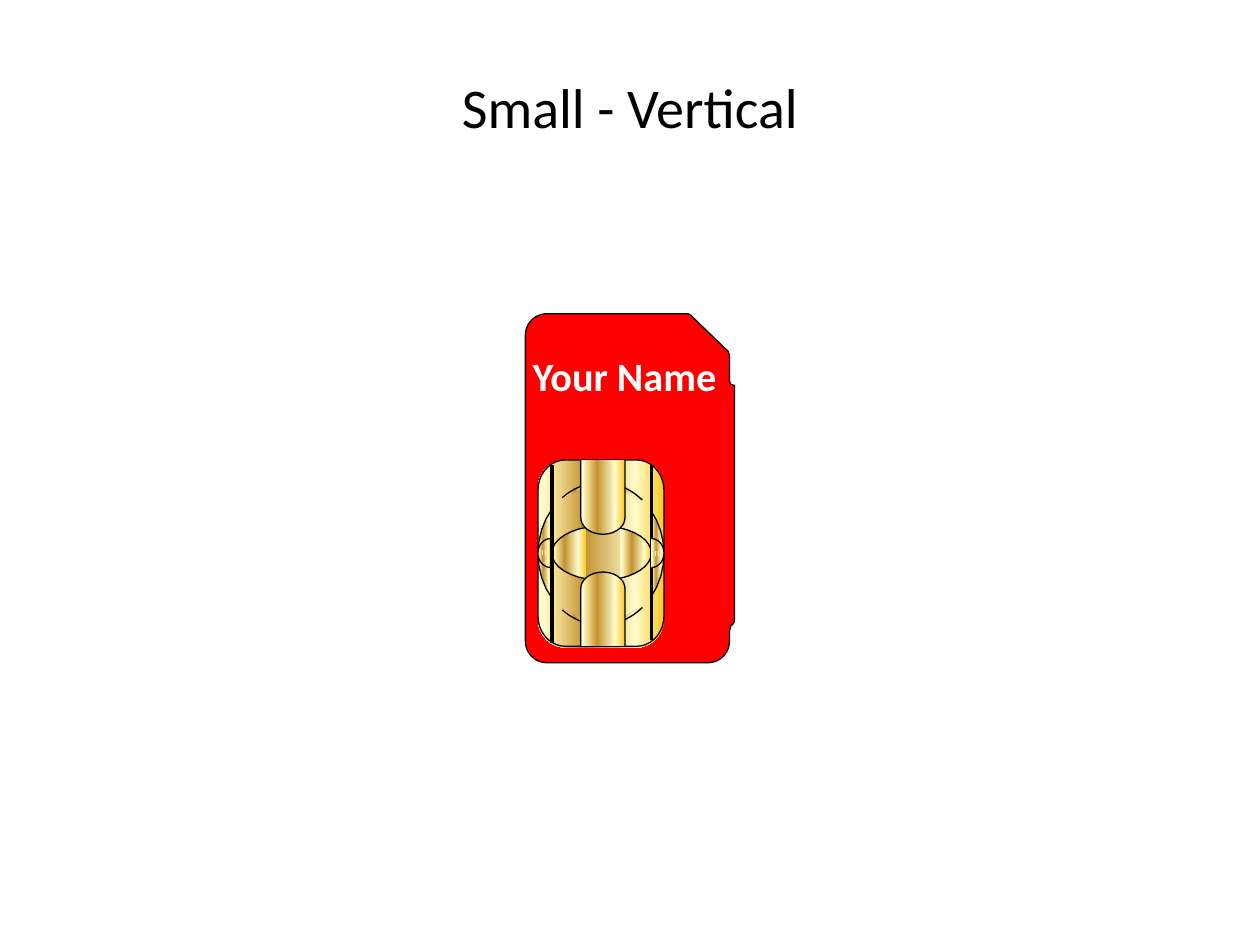
from dataclasses import dataclass
from math import cos, radians, sin

from lxml.etree import SubElement
from pptx import Presentation
from pptx.dml.color import RGBColor
from pptx.enum.shapes import MSO_CONNECTOR, MSO_SHAPE
from pptx.enum.text import MSO_ANCHOR, PP_ALIGN
from pptx.oxml.ns import qn
from pptx.util import Inches, Pt


@dataclass(frozen=True)
class Theme:
    font: str = "Calibri"
    title_size: int = 32
    name_size: int = 23
    black: str = "000000"
    white: str = "FFFFFF"
    card: str = "FF0000"
    gold: tuple = ((0, "FBC926"), (23, "FFFBCC"), (63, "C3922E"),
                   (83, "EED688"), (95, "FFFBCC"))


THEME = Theme()


def arc(cx, cy, rx, ry, start, end):
    """Points on an ellipse, in degrees clockwise from the right."""
    steps = max(8, round(abs(end - start) / 10))
    angles = [radians(start + (end - start) * i / steps) for i in range(steps + 1)]
    return [(cx + rx * cos(a), cy + ry * sin(a)) for a in angles]


def fill_gold(sp):
    """Fill with the metal gradient, running from right to left."""
    sp.fill.gradient()
    sp.fill.gradient_angle = 180
    stops = sp._element.spPr.find(qn("a:gradFill")).find(qn("a:gsLst"))
    for gs in list(stops):
        stops.remove(gs)
    for pos, color in THEME.gold:
        gs = SubElement(stops, qn("a:gs"), pos=str(pos * 1000))
        SubElement(gs, qn("a:srgbClr"), val=color)


def set_line(line):
    line.color.rgb = RGBColor.from_string(THEME.black)
    line.width = Pt(0)


def style_shape(sp, color=None, outlined=True):
    """Use a solid colour if one is given, else the gold gradient."""
    sp.shadow.inherit = False
    if color:
        sp.fill.solid()
        sp.fill.fore_color.rgb = RGBColor.from_string(color)
    else:
        fill_gold(sp)
    if outlined:
        set_line(sp.line)
    else:
        sp.line.fill.background()


def add_outline(shapes, points, close=False, **style):
    pts = [(Inches(x), Inches(y)) for x, y in points]
    builder = shapes.build_freeform(*pts[0])
    builder.add_line_segments(pts[1:], close=close)
    style_shape(builder.convert_to_shape(), **style)


def add_vertical(shapes, x, top, bottom):
    line = shapes.add_connector(MSO_CONNECTOR.STRAIGHT, Inches(x), Inches(bottom),
                                Inches(x), Inches(top))
    set_line(line.line)
    SubElement(line._element.spPr, qn("a:effectLst"))


def write_text(sp, text, *, size, color, bold=False, align=PP_ALIGN.LEFT,
               anchor=MSO_ANCHOR.TOP):
    tf = sp.text_frame
    tf.word_wrap = False
    tf.vertical_anchor = anchor
    p = tf.paragraphs[0]
    p.alignment = align
    r = p.add_run()
    r.text = text
    r.font.name = THEME.font
    r.font.size = Pt(size)
    r.font.bold = bold
    r.font.color.rgb = RGBColor.from_string(color)


def add_title(s, text):
    title = s.shapes.title
    title.left, title.top = Inches(3.55), Inches(0.52)
    title.width, title.height = Inches(2.9), Inches(0.64)
    write_text(title, text, size=THEME.title_size, color=THEME.black,
               align=PP_ALIGN.CENTER, anchor=MSO_ANCHOR.MIDDLE)


def add_card(shapes):
    radius = 0.17
    corners = [(5.62, 5.09, 0), (4.34, 5.09, 90), (4.34, 2.66, 180)]
    points = [(5.79, 5.01)]
    for cx, cy, start in corners:
        points += arc(cx, cy, radius, radius, start, start + 90)
    cut_corner = [(5.46, 2.49), (5.48, 2.5), (5.78, 2.79), (5.79, 2.82)]
    ridge = [(5.79, 3.02), (5.8, 3.05), (5.83, 3.06), (5.83, 4.93),
             (5.82, 4.95), (5.8, 4.97), (5.79, 5.01)]
    add_outline(shapes, points + cut_corner + ridge, color=THEME.card)


def add_chip_base(shapes):
    base = shapes.add_shape(MSO_SHAPE.ROUNDED_RECTANGLE, Inches(4.27), Inches(3.65),
                            Inches(1), Inches(1.49))
    base.adjustments[0] = 0.225
    style_shape(base, outlined=False)
    points = []
    for cx, cy, start in [(5.05, 3.89, -90), (5.05, 4.89, 0),
                          (4.49, 4.89, 90), (4.49, 3.89, 180)]:
        points += arc(cx, cy, 0.22, 0.24, start, start + 90)
    add_outline(shapes, points, close=True)


def add_chip_contacts(shapes):
    for start, end in [(141, 219), (266, 232), (49, 86), (-37, 37), (274, 311), (128, 94)]:
        add_outline(shapes, arc(4.77, 4.395, 0.5, 0.565, start, end))
    for start, end in [(-68, 68), (108, 252)]:
        add_outline(shapes, arc(4.775, 4.39, 0.395, 0.215, start, end))

    left, right, middle = 4.61, 4.96, 4.785
    for edge, cy, start in [(5.13, 4.67, 180), (3.65, 4.11, 0)]:
        first, last = (left, right) if start else (right, left)
        curve = arc(middle, cy, 0.175, 0.13, start, start + 180)
        add_outline(shapes, [(first, edge), *curve, (last, edge)])

    add_vertical(shapes, 4.38, 3.69, 5.1)
    add_vertical(shapes, 5.17, 3.69, 5.08)
    for cx, start in [(4.37, 270), (5.17, 90)]:
        add_outline(shapes, arc(cx, 4.39, 0.1, 0.115, start, start - 180))
    for cx, cy in [(4.32, 4.385), (5.215, 4.395)]:
        add_outline(shapes, arc(cx, cy, 0.02, 0.02, 0, 360), close=True, outlined=False)


def main():
    prs = Presentation()
    prs.slide_width, prs.slide_height = Inches(10), Inches(7.5)
    s = prs.slides.add_slide(prs.slide_layouts[5])
    add_title(s, "Small - Vertical")

    shapes = s.shapes.add_group_shape().shapes
    add_card(shapes)
    add_chip_base(shapes)
    add_chip_contacts(shapes)
    name = shapes.add_textbox(Inches(4.13), Inches(2.74), Inches(1.74), Inches(0.5))
    write_text(name, "Your Name", size=THEME.name_size, color=THEME.white, bold=True)
    prs.save("out.pptx")


if __name__ == "__main__":
    main()
